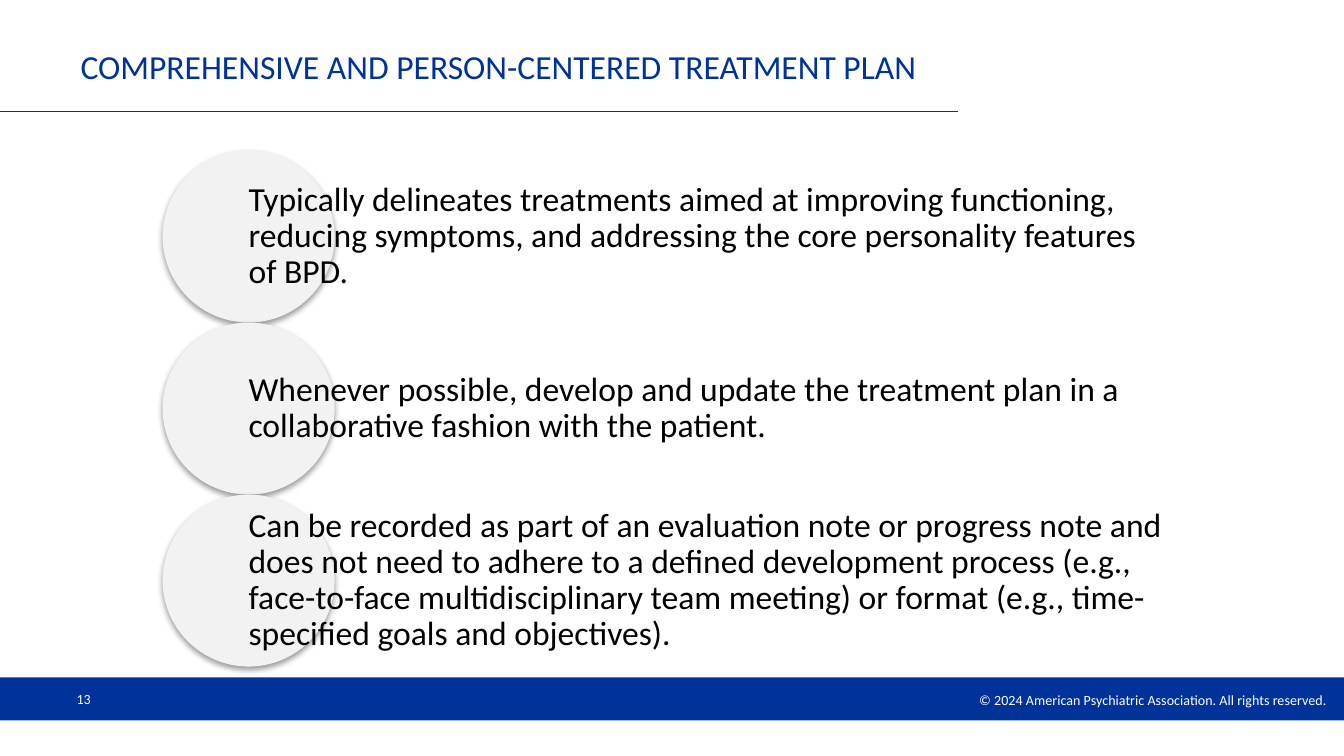
from lxml.etree import SubElement
from pptx import Presentation
from pptx.dml.color import RGBColor
from pptx.enum.shapes import MSO_CONNECTOR, MSO_SHAPE
from pptx.enum.text import MSO_ANCHOR, PP_ALIGN
from pptx.oxml import parse_xml
from pptx.oxml.ns import nsdecls, qn
from pptx.util import Inches, Pt

TITLE = "COMPREHENSIVE AND PERSON-CENTERED TREATMENT PLAN"
POINTS = [
    "Typically delineates treatments aimed at improving functioning, "
    "reducing symptoms, and addressing the core personality features of BPD.",
    "Whenever possible, develop and update the treatment plan in a "
    "collaborative fashion with the patient.",
    "Can be recorded as part of an evaluation note or progress note and does "
    "not need to adhere to a defined development process (e.g., face-to-face "
    "multidisciplinary team meeting) or format (e.g., time-specified goals "
    "and objectives).",
]
RIGHTS = "© 2024 American Psychiatric Association. All rights reserved."
PAGE = "13"

BLUE, WHITE, BLACK, PALE = "003399", "FFFFFF", "000000", "F2F2F2"
WIDTH = Inches(10)
LEFT, TOP, SIZE = 1.21, 1.12, 1.28  # circles stacked edge to edge
SHADOW = f"""<a:effectLst {nsdecls("a")}>
  <a:outerShdw blurRad="40000" dist="20000" dir="5400000" rotWithShape="0">
    <a:srgbClr val="{BLACK}"><a:alpha val="38000"/></a:srgbClr>
  </a:outerShdw>
</a:effectLst>"""


def color(code):
    return RGBColor.from_string(code)


def place(shape, *box):
    shape.left, shape.top, shape.width, shape.height = map(Inches, box)


def write(shape, text, size, code, inset=(0.1, 0.05, 0.1, 0.05),
          align=PP_ALIGN.LEFT, spacing=1.0):
    """Fill a shape with one paragraph; inset is left, top, right, bottom."""
    frame = shape.text_frame
    frame.word_wrap = True
    frame.vertical_anchor = MSO_ANCHOR.MIDDLE
    (frame.margin_left, frame.margin_top,
     frame.margin_right, frame.margin_bottom) = map(Inches, inset)
    frame.text = text
    para = frame.paragraphs[0]
    para.alignment, para.line_spacing = align, spacing
    para.font.name, para.font.size = "Calibri", Pt(size)
    para.font.color.rgb = color(code)


def add_text(slide, box, *args, **style):
    write(slide.shapes.add_textbox(*map(Inches, box)), *args, **style)


def add_solid(slide, kind, box, code):
    shape = slide.shapes.add_shape(kind, *map(Inches, box))
    shape.shadow.inherit = False
    shape.fill.solid()
    shape.fill.fore_color.rgb = color(code)
    shape.line.fill.background()
    return shape


def add_frame(slide):
    """Draw the title, its rule and the footer band."""
    place(slide.shapes.title, 0.5, 0.25, 6.63, 0.48)
    write(slide.shapes.title, TITLE, 18, BLUE)
    rule = slide.shapes.add_connector(
        MSO_CONNECTOR.STRAIGHT, *map(Inches, (0, 0.83, 7.13, 0.83)))
    rule.line.color.rgb = color(BLUE)
    rule.line.width = Pt(1)
    SubElement(rule._element.spPr, qn("a:effectLst"))

    add_solid(slide, MSO_SHAPE.RECTANGLE, (0, 5.04, 10, 0.32), BLUE)
    add_text(slide, (5.63, 5.09, 4.37, 0.23), RIGHTS, 7.5, WHITE,
             inset=(0.1, 0.05, 0.13, 0.05), align=PP_ALIGN.RIGHT)
    add_text(slide, (0.5, 5.05, 2.33, 0.3), PAGE, 7.5, WHITE,
             inset=(0.07, 0.04, 0.07, 0.04))


def add_points(slide):
    for row, text in enumerate(POINTS):
        top = TOP + row * SIZE
        disc = add_solid(slide, MSO_SHAPE.OVAL, (LEFT, top, SIZE, SIZE), PALE)
        props = disc._element.spPr
        props.replace(props.find(qn("a:effectLst")), parse_xml(SHADOW))
        add_text(slide, (LEFT + SIZE / 2, top, 6.83, SIZE), text, 18, BLACK,
                 inset=(0, 0.03, 0, 0.03), spacing=0.9)


def main():
    deck = Presentation()
    deck.slide_width, deck.slide_height = WIDTH, WIDTH * 9 // 16
    slide = deck.slides.add_slide(deck.slide_layouts[5])
    add_frame(slide)
    add_points(slide)
    deck.save("out.pptx")


if __name__ == "__main__":
    main()
